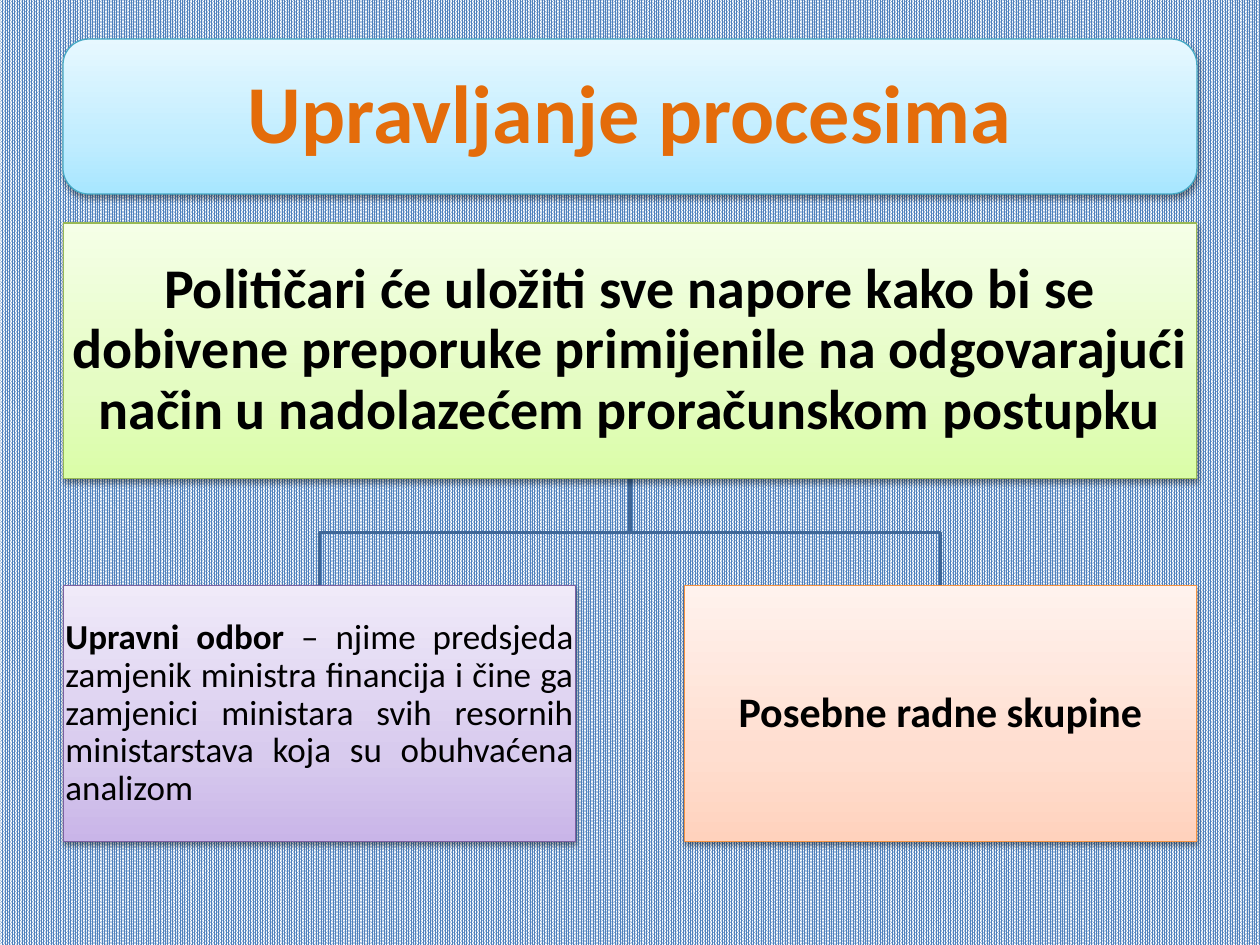
from copy import deepcopy
from dataclasses import dataclass

from lxml import etree
from pptx import Presentation
from pptx.dml.color import RGBColor
from pptx.enum import dml, shapes, text
from pptx.oxml.ns import qn
from pptx.util import Pt


@dataclass(frozen=True)
class Theme:
    font: str = "Calibri"
    ink: str = "000000"
    title_ink: str = "E46C0A"
    branch: str = "3F6797"
    pattern: str = "4F81BD"
    pattern_back: str = "FFFFFF"
    blue: tuple = ("A7E6FF", "C1EDFF", "E7F8FF", "46AAC5")
    green: tuple = ("DAFDA7", "E4FCC2", "F5FFE7", "98B955")
    purple: tuple = ("C9B5E8", "D8CBEE", "F0EAF9", "7D60A0")
    orange: tuple = ("FFD2BD", "FFDED0", "FFF2ED", "F69240")
    title_size: int = 47
    main_size: int = 32
    body_size: int = 20
    group_size: int = 24


THEME = Theme()


@dataclass(frozen=True)
class Panel:
    left: float
    top: float
    width: float
    height: float
    spans: tuple  # (wording, bold) pairs
    size: int
    colors: tuple  # three gradient stops, then the outline
    inset: float = 1.44
    ink: str = THEME.ink
    align: text.PP_ALIGN = text.PP_ALIGN.CENTER
    kind: shapes.MSO_SHAPE = shapes.MSO_SHAPE.RECTANGLE

    @property
    def center(self) -> float:
        return self.left + self.width / 2

    @property
    def bottom(self) -> float:
        return self.top + self.height


def rgb(code: str) -> RGBColor:
    return RGBColor.from_string(code)


def fill_gradient(box, colors: tuple) -> None:
    """Fill upwards with three stops."""
    box.fill.gradient()
    box.fill.gradient_angle = 90
    stop_list = box._element.spPr.find(".//" + qn("a:gsLst"))
    stop_list.insert(1, deepcopy(stop_list[0]))
    for stop, color, position in zip(box.fill.gradient_stops, colors, (0, 0.35, 1)):
        stop.color.rgb = rgb(color)
        stop.position = position


def add_shadow(box) -> None:
    box.shadow.inherit = False
    effects = box._element.spPr.find(qn("a:effectLst"))
    shadow = etree.SubElement(
        effects, qn("a:outerShdw"), blurRad=str(Pt(3.1)), dist=str(Pt(1.6)),
        dir="5400000", rotWithShape="0")
    color = etree.SubElement(shadow, qn("a:srgbClr"), val="000000")
    etree.SubElement(color, qn("a:alpha"), val="38000")


def draw_panel(page, panel: Panel) -> None:
    box = page.shapes.add_shape(
        panel.kind, Pt(panel.left), Pt(panel.top), Pt(panel.width), Pt(panel.height))
    fill_gradient(box, panel.colors)
    box.line.color.rgb = rgb(panel.colors[-1])
    box.line.width = Pt(0.75)
    add_shadow(box)

    frame = box.text_frame
    frame.word_wrap = True
    frame.vertical_anchor = text.MSO_ANCHOR.MIDDLE
    frame.margin_left = frame.margin_right = Pt(panel.inset)
    frame.margin_top = frame.margin_bottom = Pt(panel.inset)
    para = frame.paragraphs[0]
    para.alignment = panel.align
    para.line_spacing = 0.9
    for wording, bold in panel.spans:
        span = para.add_run()
        span.text = wording
        span.font.name = THEME.font
        span.font.size = Pt(panel.size)
        span.font.bold = bold
        span.font.color.rgb = rgb(panel.ink)


def draw_branch(page, parent: Panel, child: Panel) -> None:
    """Draw the elbow line from a parent panel down to a child panel."""
    middle = (parent.bottom + child.top) / 2
    builder = page.shapes.build_freeform(Pt(parent.center), Pt(parent.bottom))
    builder.add_line_segments(
        [(Pt(parent.center), Pt(middle)), (Pt(child.center), Pt(middle)),
         (Pt(child.center), Pt(child.top))], close=False)
    branch = builder.convert_to_shape()
    branch.fill.background()
    branch.line.color.rgb = rgb(THEME.branch)
    branch.line.width = Pt(2)
    branch.shadow.inherit = False


def main() -> None:
    deck = Presentation()
    deck.slide_width, deck.slide_height = Pt(720), Pt(540)
    page = deck.slides.add_slide(deck.slide_layouts[6])

    # Patterned background
    back = page.background.fill
    back.patterned()
    back.pattern = dml.MSO_PATTERN.PERCENT_90
    back.fore_color.rgb = rgb(THEME.pattern)
    back.back_color.rgb = rgb(THEME.pattern_back)

    # Title banner
    draw_panel(page, Panel(
        36, 22.3, 648, 88.6, (("Upravljanje procesima", True),),
        THEME.title_size, THEME.blue, inset=14.4, ink=THEME.title_ink,
        kind=shapes.MSO_SHAPE.ROUNDED_RECTANGLE))

    # Hierarchy: one goal above two bodies
    left, width, height = 36.4, 647.2, 146.2
    child_top, child_width = 334.8, 292.4
    goal = Panel(
        left, 127.4, width, height,
        (("Političari će uložiti sve napore kako bi se dobivene preporuke "
          "primijenile na odgovarajući način u nadolazećem proračunskom postupku",
          True),),
        THEME.main_size, THEME.green)
    board = Panel(
        left, child_top, child_width, height,
        (("Upravni odbor", True),
         (" – njime predsjeda zamjenik ministra financija i čine ga zamjenici "
          "ministara svih resornih ministarstava koja su obuhvaćena analizom",
          False)),
        THEME.body_size, THEME.purple, inset=1, align=text.PP_ALIGN.JUSTIFY)
    groups = Panel(
        left + width - child_width, child_top, child_width, height,
        (("Posebne radne skupine", True),), THEME.group_size, THEME.orange)

    for child in (groups, board):
        draw_branch(page, goal, child)
    for panel in (goal, board, groups):
        draw_panel(page, panel)

    deck.save("out.pptx")


if __name__ == "__main__":
    main()
